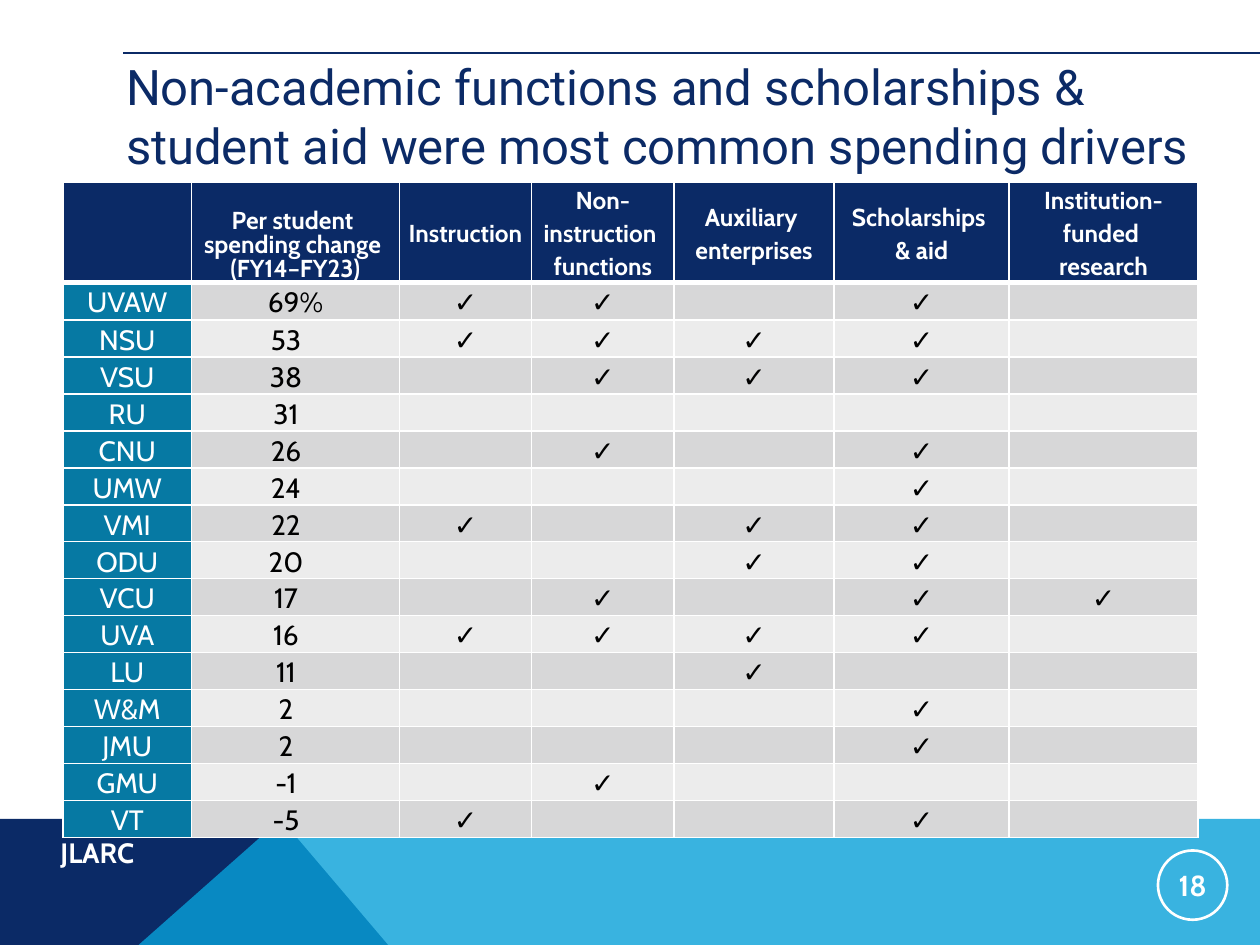
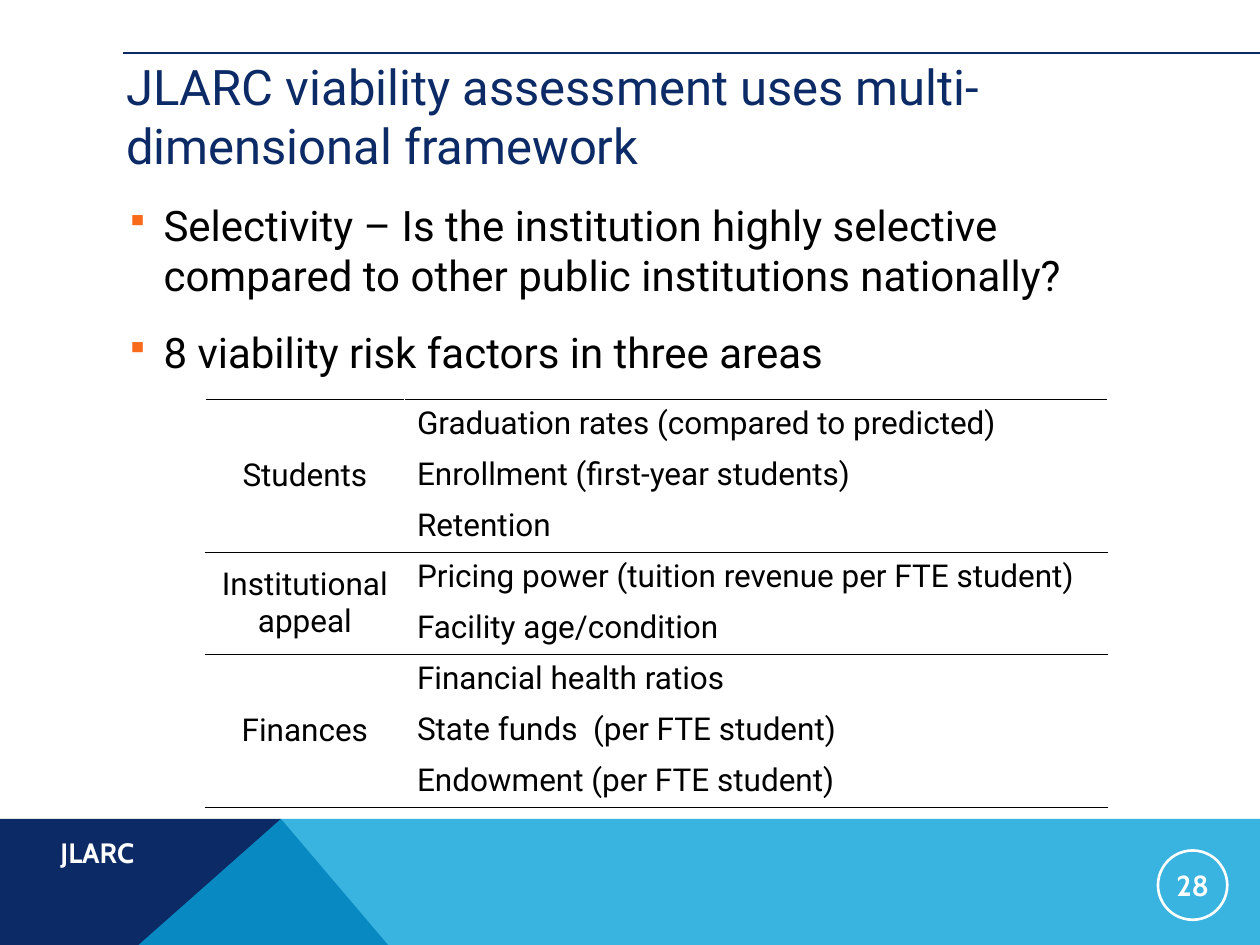
from collections import namedtuple

from lxml.etree import SubElement
from pptx import Presentation
from pptx.dml.color import RGBColor
from pptx.enum.shapes import MSO_CONNECTOR as Connector, MSO_SHAPE as Shape
from pptx.enum.text import MSO_ANCHOR as Anchor, MSO_AUTO_SIZE as AutoSize, PP_ALIGN as Align
from pptx.oxml.ns import qn
from pptx.util import Inches, Pt

# The slide is a grid of 10 columns by 7.5 rows, one inch each
COLUMNS, ROWS = 10, 7.5
BAND_TOP = 6.5
Box = namedtuple("Box", "left top width height")
# Wide enough for the longest title to fit on two lines above the table
TITLE_BOX = Box(0.9, 0.4, 8.8, 0.6)

NAVY, SKY, TEAL, ORANGE = "0B2A66", "08A1D9", "0679A3", "F96A1B"
WHITE, BLACK = "FFFFFF", "000000"
STRIPES = ("D7D7D8", "ECECEC")
HEADING_FONT, LABEL_FONT = "Roboto", "Cabin"

SPENDING_HEADERS = [
    "", "Per student \vspending change \v(FY14–FY23)", "Instruction",
    "Non-instruction \vfunctions", "Auxiliary \venterprises",
    "Scholarships \n& aid", "Institution- funded \vresearch",
]
SPENDING_WIDTHS = [1.02, 1.65, 1.05, 1.13, 1.27, 1.39, 1.5]
# School, change in spending, numbers of the checked columns
SPENDING_ROWS = [
    ("UVAW", "69%", (2, 3, 5)),
    ("NSU", "53", (2, 3, 4, 5)),
    ("VSU", "38", (3, 4, 5)),
    ("RU", "31", ()),
    ("CNU", "26", (3, 5)),
    ("UMW", "24", (5,)),
    ("VMI", "22", (2, 4, 5)),
    ("ODU", "20", (4, 5)),
    ("VCU", "17", (3, 5, 6)),
    ("UVA", "16", (2, 3, 4, 5)),
    ("LU", "11", (4,)),
    ("W&M", "2", (5,)),
    ("JMU", "2", (5,)),
    ("GMU", "-1", (3,)),
    ("VT", "-5", (2, 5)),
]
QUESTIONS = [
    "Selectivity – Is the institution highly selective compared to other "
    "public institutions nationally?",
    "8 viability risk factors in three areas",
]
RISK_AREAS = [
    ("Students", ["Graduation rates (compared to predicted)",
                  "Enrollment (first-year students)", "Retention"]),
    ("Institutional appeal", ["Pricing power (tuition revenue per FTE student)",
                              "Facility age/condition"]),
    ("Finances", ["Financial health ratios", "State funds  (per FTE student)",
                  "Endowment (per FTE student)"]),
]


def color(value):
    return RGBColor.from_string(value)


def place(box):
    return [Inches(length) for length in box]


def set_margins(target, left=0, top=0, right=0, bottom=0):
    target.margin_left, target.margin_top = Inches(left), Inches(top)
    target.margin_right, target.margin_bottom = Inches(right), Inches(bottom)


def format_text(frame, size, font, ink, bold=False, align=Align.LEFT, spacing=None, after=None):
    for paragraph in frame.paragraphs:
        paragraph.alignment = align
        paragraph.line_spacing = spacing
        paragraph.space_after = after
        for run in paragraph.runs:
            run.font.size, run.font.name, run.font.bold = Pt(size), font, bold
            run.font.color.rgb = color(ink)


# Shared slide parts

def add_band(slide, points, fill, opacity=None):
    start, *others = [(Inches(x), Inches(y)) for x, y in points]
    builder = slide.shapes.build_freeform(*start)
    builder.add_line_segments(others, close=True)
    band = builder.convert_to_shape()
    band.shadow.inherit = False
    band.fill.solid()
    band.fill.fore_color.rgb = color(fill)
    band.line.fill.background()
    if opacity:
        tint = band.element.spPr.find(".//" + qn("a:srgbClr"))
        SubElement(tint, qn("a:alpha"), val=str(opacity * 1000))


def add_footer(slide, number):
    # Two bands cross below the point where they meet
    meeting = (2.23, BAND_TOP)
    add_band(slide, [(0, ROWS), (0, BAND_TOP), meeting, (3.08, ROWS)], NAVY)
    add_band(slide, [(1.1, ROWS), meeting, (COLUMNS, BAND_TOP), (COLUMNS, ROWS)], SKY, 80)

    label = slide.shapes.add_textbox(*place(Box(0.48, BAND_TOP + 0.08, 1.6, 0.37)))
    frame = label.text_frame
    frame.word_wrap = True
    set_margins(frame, top=0.05, bottom=0.05)
    frame.text = "JLARC"
    format_text(frame, 16, LABEL_FONT, WHITE, bold=True)

    # Page number in a ring
    ring = slide.shapes.add_shape(Shape.OVAL, *place(Box(9.19, BAND_TOP + 0.25, 0.55, 0.55)))
    ring.shadow.inherit = False
    ring.fill.background()
    ring.line.color.rgb = color(WHITE)
    ring.line.width = Pt(1.5)
    frame = ring.text_frame
    set_margins(frame, 0.01, 0.01, 0.01, 0.01)
    frame.vertical_anchor = Anchor.MIDDLE
    frame.text = str(number)
    format_text(frame, 16.5, LABEL_FONT, WHITE, bold=True, align=Align.CENTER)


def add_title(slide, text, box):
    rule = slide.shapes.add_connector(
        Connector.STRAIGHT, *place(Box(box.left + 0.08, 0.42, COLUMNS, 0.42)))
    rule.line.color.rgb = color(NAVY)
    rule.line.width = Pt(1.5)
    SubElement(rule.element.spPr, qn("a:effectLst"))

    title = slide.shapes.title
    title.left, title.top, title.width, title.height = place(box)
    frame = title.text_frame
    frame.word_wrap = True
    frame.auto_size = AutoSize.NONE
    frame.vertical_anchor = Anchor.TOP
    set_margins(frame, left=0.1, top=0.05)
    frame.text = text
    format_text(frame, 28, HEADING_FONT, NAVY)


def start_slide(presentation, title, number):
    slide = presentation.slides.add_slide(presentation.slide_layouts[5])
    add_footer(slide, number)
    add_title(slide, title, TITLE_BOX)
    return slide


# Tables

def add_plain_table(slide, box, row_count, widths):
    table = slide.shapes.add_table(row_count, len(widths), *place(box)).table
    table.first_row = table.horz_banding = False
    for column, width in zip(table.columns, widths):
        column.width = Inches(width)
    return table


def set_borders(cell, top=(WHITE, 1), bottom=(WHITE, 1)):
    properties = cell._tc.get_or_add_tcPr()
    side = (WHITE, 1)
    for tag, (ink, width) in (("lnL", side), ("lnR", side), ("lnT", top), ("lnB", bottom)):
        line = SubElement(properties, qn("a:" + tag), w=str(Pt(width)))
        SubElement(SubElement(line, qn("a:solidFill")), qn("a:srgbClr"), val=ink)


def fill_spending_cell(cell, text, fill, size, ink, bold, spacing=1.1, after=None, bottom=1):
    set_borders(cell, bottom=(WHITE, bottom))
    cell.fill.solid()
    cell.fill.fore_color.rgb = color(fill)
    cell.vertical_anchor = Anchor.MIDDLE
    set_margins(cell)
    if text:
        cell.text_frame.text = text
        format_text(cell.text_frame, size, LABEL_FONT, ink, bold, Align.CENTER, spacing, after)
    else:
        # Keep empty cells from stretching their row
        SubElement(cell.text_frame.paragraphs[0]._p, qn("a:endParaRPr"), sz="1400")


def add_spending_table(slide, box):
    table = add_plain_table(slide, box, len(SPENDING_ROWS) + 1, SPENDING_WIDTHS)

    # Header row
    table.rows[0].height = Inches(0.79)
    for index, header in enumerate(SPENDING_HEADERS):
        fill_spending_cell(table.cell(0, index), header, NAVY, 14, WHITE, True,
                           spacing=0.8 if index == 1 else 1.1, bottom=3)
    table.cell(0, 1).vertical_anchor = Anchor.BOTTOM

    # One striped row for each school
    for number, (school, change, checked) in enumerate(SPENDING_ROWS, start=1):
        table.rows[number].height = Inches(0.3 if number == 1 else 0.26)
        marks = ["✓" if index in checked else "" for index in range(2, len(SPENDING_WIDTHS))]
        for index, text in enumerate([school, change, *marks]):
            fill = TEAL if index == 0 else STRIPES[(number - 1) % 2]
            fill_spending_cell(table.cell(number, index), text, fill, 16,
                               WHITE if index == 0 else BLACK, index > 1, after=Pt(3))
        # Line the figures up with the one that has a percent sign
        table.cell(number, 1).margin_right = Inches(0 if "%" in change else 0.15)


def add_risk_table(slide, box):
    row_count = sum(len(factors) for _, factors in RISK_AREAS)
    table = add_plain_table(slide, box, row_count, [1.58, 5.58])
    black, white = (BLACK, 1), (WHITE, 1)
    row = 0
    for area, factors in RISK_AREAS:
        first, last = row, row + len(factors) - 1
        table.cell(first, 0).merge(table.cell(last, 0))
        for row, factor in enumerate(factors, start=first):
            label, cell = table.cell(row, 0), table.cell(row, 1)
            set_borders(label, black, black)
            set_borders(cell, black if row == first else white, black if row == last else white)
            label.fill.background()
            cell.fill.background()
            cell.text_frame.text = factor
            format_text(cell.text_frame, 18, HEADING_FONT, BLACK)
        heading = table.cell(first, 0)
        heading.vertical_anchor = Anchor.MIDDLE
        heading.text_frame.text = area
        format_text(heading.text_frame, 18, HEADING_FONT, BLACK, align=Align.CENTER)
        row = last + 1


def add_bullets(slide, items, box):
    frame = slide.shapes.add_textbox(*place(box)).text_frame
    frame.word_wrap = True
    set_margins(frame, left=0.1)
    frame.text = "\n".join(items)
    format_text(frame, 24, HEADING_FONT, BLACK, after=Pt(3))
    for paragraph in frame.paragraphs:
        paragraph.space_before = Pt(12)
        properties = paragraph._p.get_or_add_pPr()
        properties.set("marL", str(Inches(0.3)))
        properties.set("indent", str(-Inches(0.3)))
        SubElement(SubElement(properties, qn("a:buClr")), qn("a:srgbClr"), val=ORANGE)
        SubElement(properties, qn("a:buSzPct"), val="75000")
        SubElement(properties, qn("a:buChar"), char="▪")


# Slides

def add_spending_slide(presentation):
    slide = start_slide(
        presentation,
        "Non-academic functions and scholarships & student aid were most common spending drivers",
        18)
    add_spending_table(slide, Box(0.5, 1.45, 9, 5.18))


def add_viability_slide(presentation):
    slide = start_slide(
        presentation, "JLARC viability assessment uses multi-dimensional framework", 28)
    add_bullets(slide, QUESTIONS, Box(0.9, 1.58, 8.5, 3.91))
    add_risk_table(slide, Box(1.63, 3.17, 7.17, 3.24))


def main():
    presentation = Presentation()
    presentation.slide_width, presentation.slide_height = Inches(COLUMNS), Inches(ROWS)
    add_spending_slide(presentation)
    add_viability_slide(presentation)
    presentation.save("out.pptx")


if __name__ == "__main__":
    main()
